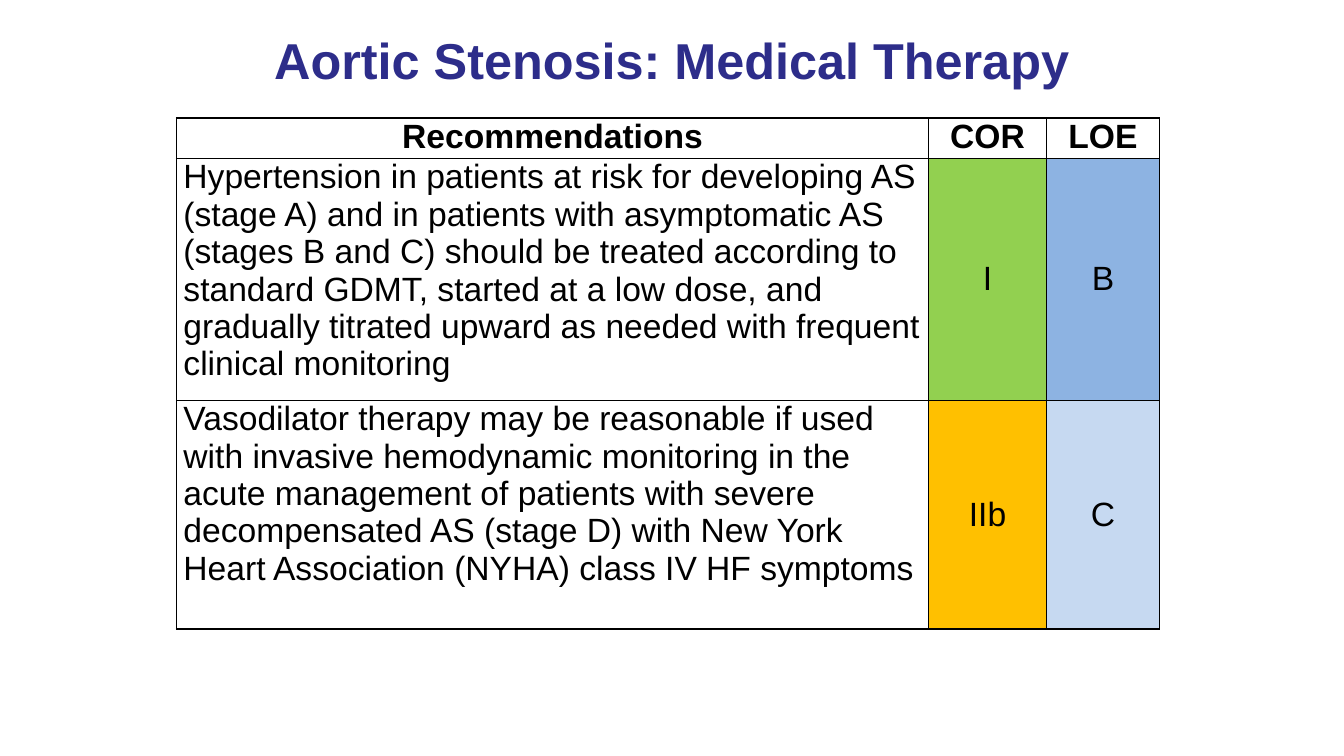
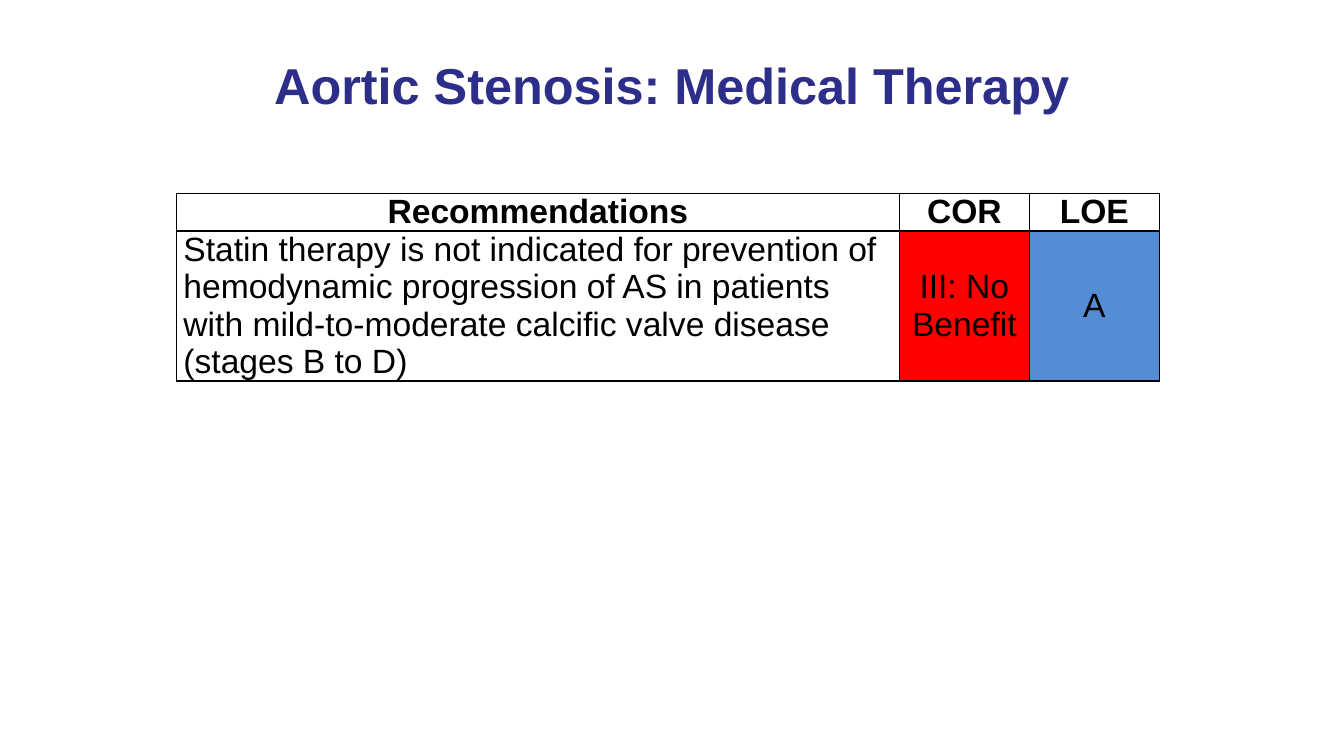
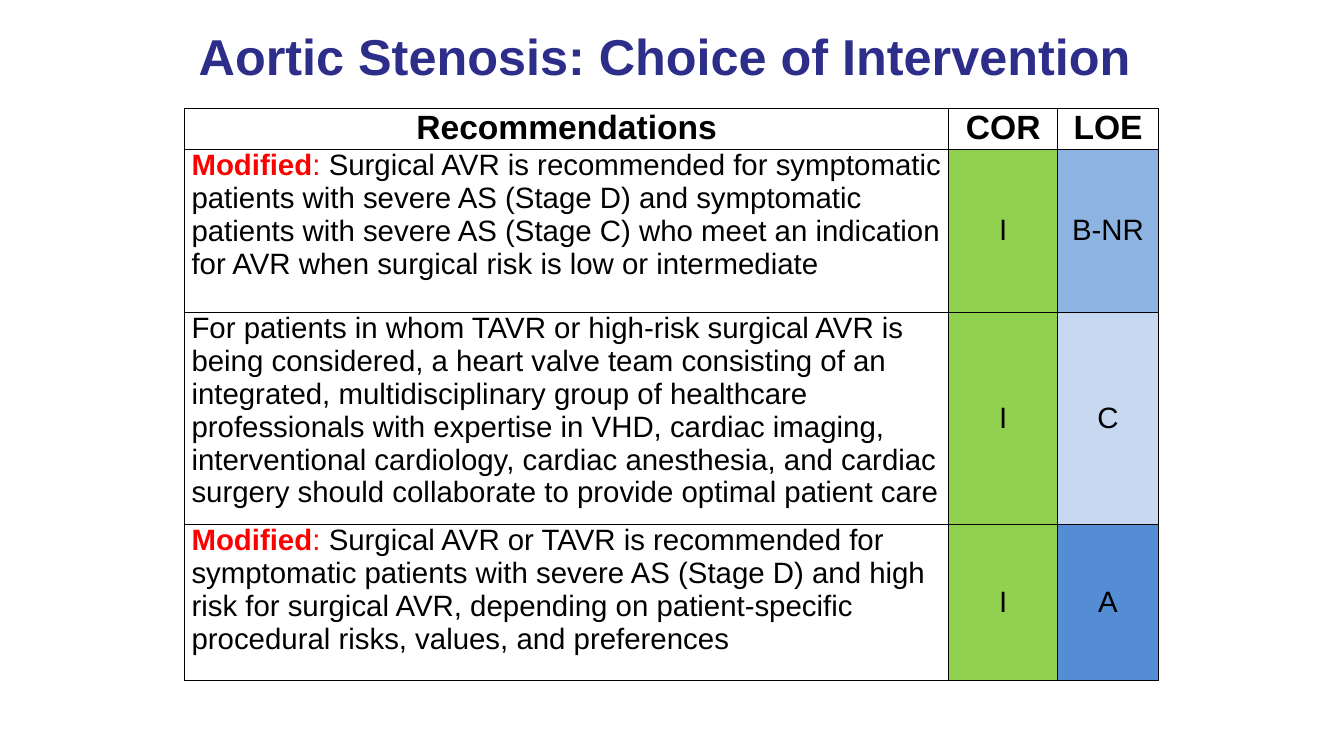
from lxml import etree
from pptx import Presentation
from pptx import util as u
from pptx.dml.color import RGBColor
from pptx.enum import text
from pptx.oxml import ns

# Shared style
FONT = "Arial"
NAVY = RGBColor(0x2D, 0x2D, 0x8A)
BLACK = RGBColor(0, 0, 0)
RED = RGBColor(0xFF, 0, 0)
GREEN = RGBColor(0x92, 0xD0, 0x50)
AMBER = RGBColor(0xFF, 0xC0, 0)
DARK_BLUE = RGBColor(0x54, 0x8D, 0xD4)
MID_BLUE = RGBColor(0x8D, 0xB3, 0xE2)
PALE_BLUE = RGBColor(0xC6, 0xD9, 0xF1)
CLASS_FILL = {"I": GREEN, "IIb": AMBER, "III: No Benefit": RED}
LEVEL_FILL = {"A": DARK_BLUE, "B": MID_BLUE, "B-NR": MID_BLUE, "C": PALE_BLUE}
WIDTH, HEIGHT = 13.33, 7.5
TITLE_WIDTH = 10
TITLE_SIZE, HEADER_SIZE = 36, 24
CELL_INSET = 0.07
HEADER = ("Recommendations", "COR", "LOE")
FLAG = "Modified"

# Content: rows are (flagged as modified, recommendation, class, level)
SLIDES = [
    dict(title="Aortic Stenosis: Medical Therapy", title_box=(0.17, 0.83),
         table_at=(1.75, 1.17), cols=(7.46, 1.17, 1.12),
         heights=(0.4, 2.4, 2.27), size=24, rows=[
        (False, "Hypertension in patients at risk for developing AS (stage A) and in "
         "patients with asymptomatic AS (stages B and C) should be treated according "
         "to standard GDMT, started at a low dose, and gradually titrated upward as "
         "needed with frequent clinical monitoring", "I", "B"),
        (False, "Vasodilator therapy may be reasonable if used with invasive "
         "hemodynamic monitoring in the acute management of patients with severe "
         "decompensated AS (stage D) with New York Heart Association (NYHA) class IV "
         "HF symptoms", "IIb", "C"),
    ]),
    dict(title="Aortic Stenosis: Medical Therapy", title_box=(0.42, 0.83),
         table_at=(1.75, 1.92), cols=(7.17, 1.29, 1.29),
         heights=(0.36, 1.48), size=24, rows=[
        (False, "Statin therapy is not indicated for prevention of hemodynamic "
         "progression of AS in patients with mild-to-moderate calcific valve disease "
         "(stages B to D)", "III: No Benefit", "A"),
    ]),
    dict(title="Aortic Stenosis: Choice of Intervention ", title_box=(0.17, 0.75),
         table_at=(1.83, 1.08), cols=(7.58, 1.08, 1),
         heights=(0.4, 1.62, 2.1, 1.55), size=21, rows=[
        (True, "Surgical AVR is recommended for symptomatic patients with severe AS "
         "(Stage D) and symptomatic patients with severe AS (Stage C) who meet an "
         "indication for AVR when surgical risk is low or intermediate", "I", "B-NR"),
        (False, "For patients in whom TAVR or high-risk surgical AVR is being "
         "considered, a heart valve team consisting of an integrated, "
         "multidisciplinary group of healthcare professionals with expertise in VHD, "
         "cardiac imaging, interventional cardiology, cardiac anesthesia, and cardiac "
         "surgery should collaborate to provide optimal patient care", "I", "C"),
        (True, "Surgical AVR or TAVR is recommended for symptomatic patients with "
         "severe AS (Stage D) and high risk for surgical AVR, depending on "
         "patient-specific procedural risks, values, and preferences", "I", "A"),
    ]),
]


def style(font, size, color, bold=False):
    font.name, font.size, font.bold = FONT, u.Pt(size), bold
    font.color.rgb = color


def add_title(s, caption, top, height):
    sp = s.shapes.title
    sp.left, sp.top = u.Inches((WIDTH - TITLE_WIDTH) / 2), u.Inches(top)
    sp.width, sp.height = u.Inches(TITLE_WIDTH), u.Inches(height)
    tf = sp.text_frame
    tf.text = caption
    tf.auto_size = text.MSO_AUTO_SIZE.NONE
    tf.vertical_anchor = text.MSO_ANCHOR.MIDDLE
    p = tf.paragraphs[0]
    p.alignment = text.PP_ALIGN.CENTER
    style(p.font, TITLE_SIZE, NAVY, True)


def add_borders(cell):
    tc_pr = cell._tc.get_or_add_tcPr()
    for i, side in enumerate(("a:lnL", "a:lnR", "a:lnT", "a:lnB")):
        line = etree.Element(ns.qn(side), w=str(u.Pt(1)))
        fill = etree.SubElement(line, ns.qn("a:solidFill"))
        etree.SubElement(fill, ns.qn("a:srgbClr"), val=str(BLACK))
        tc_pr.insert(i, line)


def fill_cell(cell, runs, size, bold=False, centred=True, middle=False, color=None):
    """Write runs of (text, colour, bold); a None bold follows the paragraph."""
    cell.margin_left = cell.margin_right = u.Inches(CELL_INSET)
    cell.margin_top = cell.margin_bottom = 0
    cell.vertical_anchor = text.MSO_ANCHOR.MIDDLE if middle else text.MSO_ANCHOR.TOP
    p = cell.text_frame.paragraphs[0]
    p.alignment = text.PP_ALIGN.CENTER if centred else text.PP_ALIGN.LEFT
    style(p.font, size, BLACK, bold)
    for words, run_color, run_bold in runs:
        r = p.add_run()
        r.text = words
        style(r.font, size, run_color, bold if run_bold is None else run_bold)
    if color is None:
        cell.fill.background()
    else:
        cell.fill.solid()
        cell.fill.fore_color.rgb = color
    add_borders(cell)


def add_recommendations(s, table_at, cols, heights, size, rows):
    box = (*table_at, sum(cols), sum(heights))
    table = s.shapes.add_table(len(heights), len(cols), *map(u.Inches, box)).table
    table.first_row = table.horz_banding = False
    for column, width in zip(table.columns, cols):
        column.width = u.Inches(width)
    for row, height in zip(table.rows, heights):
        row.height = u.Inches(height)

    for i, label in enumerate(HEADER):
        fill_cell(table.cell(0, i), [(label, BLACK, None)], HEADER_SIZE, bold=True)
    for n, (flagged, advice, grade, level) in enumerate(rows, 1):
        runs = [(FLAG, RED, True), (": ", RED, None)] if flagged else []
        fill_cell(table.cell(n, 0), runs + [(advice, BLACK, None)], size, centred=False)
        ratings = ((grade, CLASS_FILL[grade]), (level, LEVEL_FILL[level]))
        for i, (label, color) in enumerate(ratings, 1):
            fill_cell(table.cell(n, i), [(label, BLACK, None)], size,
                      middle=True, color=color)


def main():
    prs = Presentation()
    prs.slide_width, prs.slide_height = u.Inches(WIDTH), u.Inches(HEIGHT)
    for d in SLIDES:
        s = prs.slides.add_slide(prs.slide_layouts[5])
        add_title(s, d["title"], *d["title_box"])
        add_recommendations(s, d["table_at"], d["cols"], d["heights"],
                            d["size"], d["rows"])
    prs.save("out.pptx")


if __name__ == "__main__":
    main()
